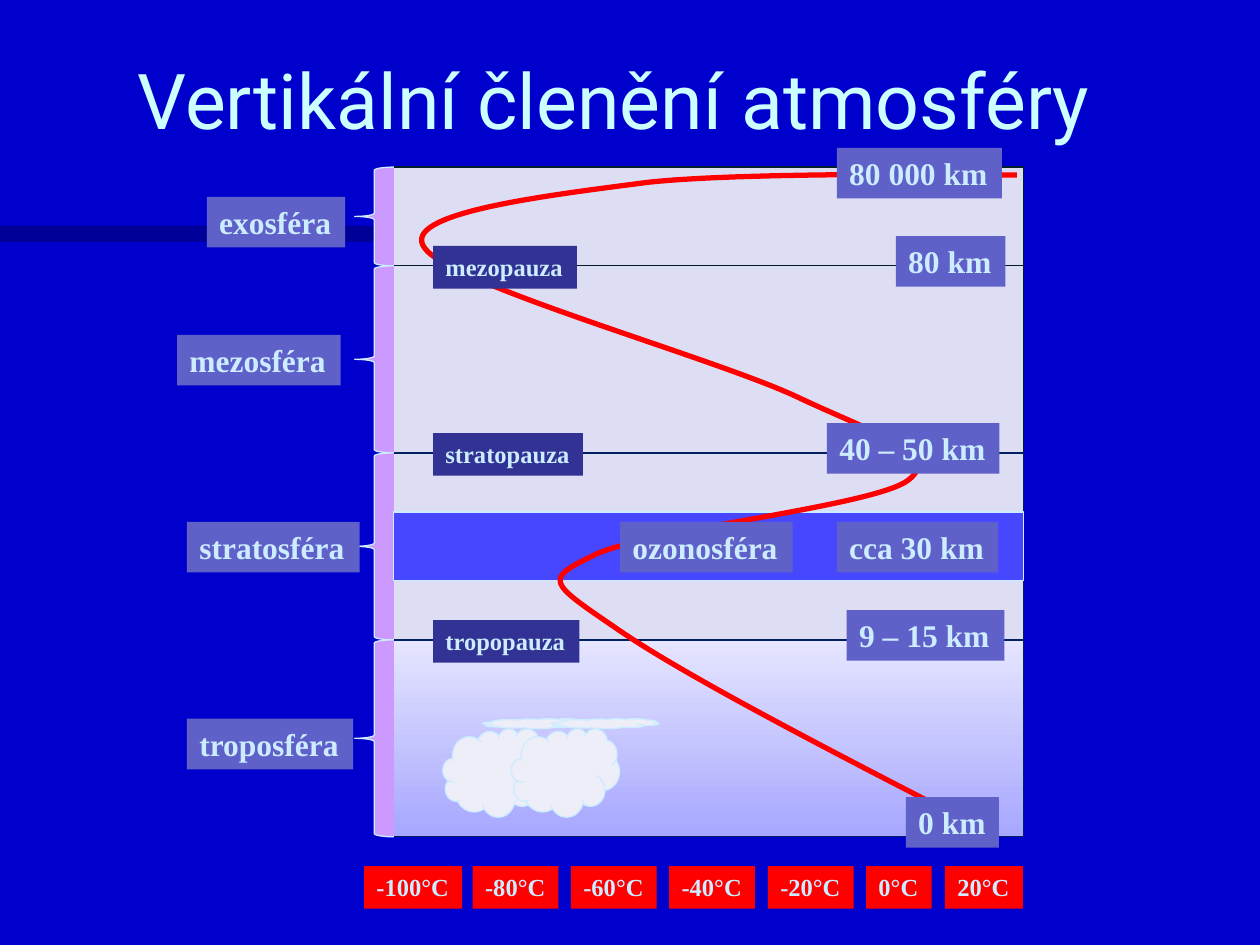
from pptx import Presentation
from pptx.dml.color import RGBColor as Rgb
from pptx.enum.shapes import MSO_SHAPE as Form
from pptx.enum.text import MSO_ANCHOR as Anchor, MSO_AUTO_SIZE as Fit, PP_ALIGN as Align
from pptx.oxml.ns import qn
from pptx.util import Cm, Pt
from lxml import etree

HEX = {
    "back": "0000CC", "stripe": "000066", "title": "CCFFFF", "pale": "CCECFF",
    "band": "DDDDF3", "dark": "001D2E", "navy": "002060", "low": "A7A7FF",
    "high": "E5E5FF", "ozone": "4747FF", "brace": "CC99FF", "layer": "6060C9",
    "pause": "323294", "red": "FF0000", "cloud": "EEEEF9",
}
C = {name: Rgb.from_string(code) for name, code in HEX.items()}

deck = Presentation()
deck.slide_width, deck.slide_height = Cm(25.4), Cm(19.05)
slide = deck.slides.add_slide(deck.slide_layouts[6])
slide.background.fill.solid()
slide.background.fill.fore_color.rgb = C["back"]


def draw(form, x, y, w, h, fill, line=None):
    """Add a flat preset shape, measured in centimetres."""
    shape = slide.shapes.add_shape(form, Cm(x), Cm(y), Cm(w), Cm(h))
    shape.shadow.inherit = False
    shape.fill.solid()
    shape.fill.fore_color.rgb = C[fill]
    if line:
        shape.line.color.rgb = C[line]
        shape.line.width = Pt(0.75)
    else:
        shape.line.fill.background()
    return shape


def label(text, x, y, w, fill, size):
    h = 1.02 if size == 18 else 0.86
    frame = draw(Form.RECTANGLE, x, y, w, h, fill).text_frame
    frame.word_wrap = False
    frame.auto_size = Fit.SHAPE_TO_FIT_TEXT
    frame.vertical_anchor = Anchor.TOP
    para = frame.paragraphs[0]
    para.text = text
    para.alignment = Align.LEFT
    font = para.font
    font.name, font.size, font.bold = "Times New Roman", Pt(size), True
    font.color.rgb = C["pale"]


# Stripe and title
stripe = draw(Form.RECTANGLE, 0, 4.55, 9.3, 0.33, "stripe")
tint = stripe.fill._xPr.find(".//" + qn("a:srgbClr"))
etree.SubElement(tint, qn("a:alpha")).set("val", "50000")

box = slide.shapes.add_textbox(Cm(1.59), Cm(0.79), Cm(21.59), Cm(2.26))
frame = box.text_frame
frame.word_wrap = True
frame.vertical_anchor = Anchor.BOTTOM
para = frame.paragraphs[0]
para.text = "Vertikální členění atmosféry"
para.alignment = Align.CENTER
para.font.name, para.font.size = "Roboto", Pt(44)
para.font.color.rgb = C["title"]

# Layers, top to bottom, each with its brace
LEFT, WIDE = 7.94, 12.7
edges = [3.37, 5.36, 9.13, 12.9, 16.87]
lines = ["dark", "dark", "navy", "navy"]
for top, end, line in zip(edges, edges[1:], lines):
    band = draw(Form.RECTANGLE, LEFT, top, WIDE, end - top, "band", line)
    draw(Form.LEFT_BRACE, LEFT - 0.79, top, 0.79, end - top, "brace", "pale")
band.fill.gradient()
band.fill.gradient_angle = 90
for stop, name in zip(band.fill.gradient_stops, ("low", "high")):
    stop.color.rgb = C[name]
draw(Form.RECTANGLE, LEFT, 10.32, WIDE, 1.39, "ozone", "pale")

# Temperature curve: after the start, each row is two handles and an end
start = (19.96, 16.79)
arcs = [
    (16.84, 15.19), (13.74, 13.59), (12.4, 12.65),
    (11.05, 11.73), (10.97, 11.68), (11.96, 11.2),
    (12.95, 10.69), (17.63, 10.21), (18.31, 9.68),
    (19, 9.14), (17.75, 8.79), (16.13, 8.03),
    (14.5, 7.24), (9.07, 5.74), (8.56, 5),
    (8.03, 4.29), (11.05, 3.94), (13.03, 3.68),
    (15.04, 3.45), (20.5, 3.53), (20.5, 3.53),
]
pen = slide.shapes.build_freeform(Cm(start[0]), Cm(start[1]))
pen.add_line_segments([(Cm(x), Cm(y)) for x, y in arcs], close=False)
curve = pen.convert_to_shape()
curve.shadow.inherit = False
curve.fill.background()
curve.line.color.rgb = C["red"]
curve.line.width = Pt(3)
# Join every three straight segments into one cubic arc
trace = curve._element.find(".//" + qn("a:path"))
legs = trace.findall(qn("a:lnTo"))
for i in range(0, len(legs), 3):
    arc = etree.SubElement(trace, qn("a:cubicBezTo"))
    for leg in legs[i:i + 3]:
        arc.append(leg[0])
        trace.remove(leg)

# Names and heights
for text, x, y, w in [
    ("exosféra", 4.17, 3.97, 2.79),
    ("mezosféra", 3.57, 6.75, 3.3),
    ("stratosféra", 3.77, 10.52, 3.48),
    ("troposféra", 3.77, 14.49, 3.35),
    ("ozonosféra", 12.5, 10.52, 3.48),
    ("80 000 km", 16.87, 2.98, 3.33),
    ("80 km", 18.06, 4.76, 2.21),
    ("40 – 50 km", 16.67, 8.53, 3.48),
    ("cca 30 km", 16.87, 10.52, 3.25),
    ("9 – 15 km", 17.07, 12.3, 3.18),
    ("0 km", 18.26, 16.07, 1.88),
]:
    label(text, x, y, w, "layer", 18)

pauses = [("mezopauza", 2.9), ("stratopauza", 3.02), ("tropopauza", 2.95)]
for (text, w), edge in zip(pauses, edges[1:]):
    label(text, 8.73, edge - 0.4, w, "pause", 14)

# Temperature scale
for text, x, w in [
    ("-100°C", 7.34, 1.98), ("-80°C", 9.53, 1.73), ("-60°C", 11.51, 1.73),
    ("-40°C", 13.49, 1.73), ("-20°C", 15.48, 1.73), ("0°C", 17.46, 1.32),
    ("20°C", 19.05, 1.57),
]:
    label(text, x, 17.46, w, "red", 14)

# Clouds
for shift in (0, 1.38):
    draw(Form.CLOUD, 8.93 + shift, 14.69, 2.18, 1.78, "cloud", "pale")
    draw(Form.CLOUD, 9.73 + shift, 14.49, 2.18, 0.2, "cloud", "pale")

deck.save("out.pptx")
